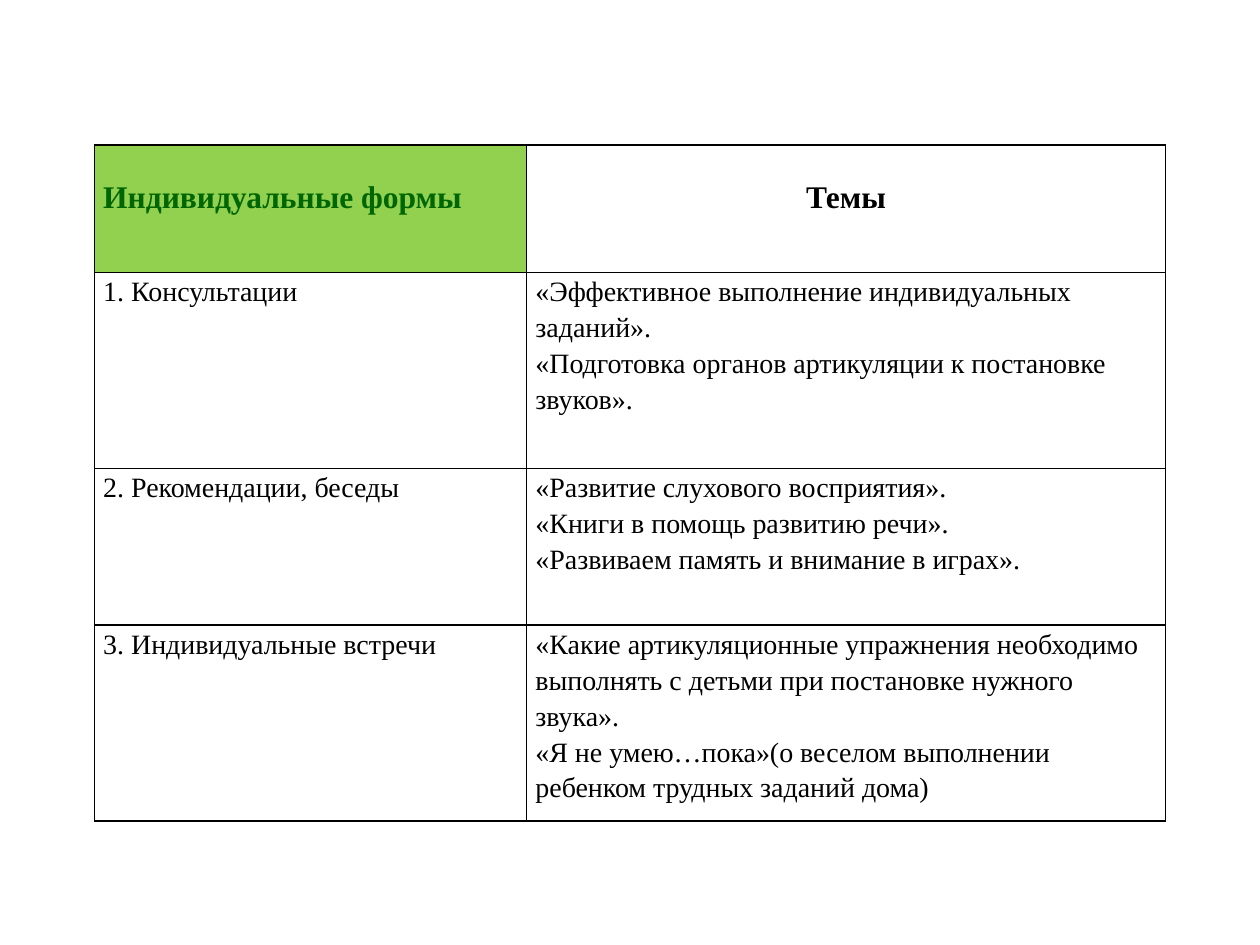
from lxml.etree import SubElement
from pptx import Presentation
from pptx.dml.color import RGBColor
from pptx.enum.text import PP_ALIGN
from pptx.oxml.ns import qn
from pptx.util import Pt

HEADINGS = ["Индивидуальные формы", "Темы"]
FORMS = [
    ("1. Консультации", [
        "«Эффективное выполнение индивидуальных заданий».",
        "«Подготовка органов артикуляции к постановке звуков».",
    ]),
    ("2. Рекомендации, беседы", [
        "«Развитие слухового восприятия».",
        "«Книги в помощь развитию речи».",
        "«Развиваем память и внимание в играх».",
    ]),
    ("3. Индивидуальные встречи", [
        "«Какие артикуляционные упражнения необходимо выполнять с детьми "
        "при постановке нужного звука».",
        "«Я не умею…пока»(о веселом выполнении ребенком трудных заданий дома)",
    ]),
]
COLUMN_WIDTHS = [247, 365]
ROW_HEIGHTS = [72.8, 112, 89.6, 112]
LEFT, TOP = 54, 82.8
HEADING_TOP = 17.5
HANGING = 27.4
BORDERS = ("a:lnL", "a:lnR", "a:lnT", "a:lnB")

HEADING_FONT = {"name": "Times New Roman", "size": Pt(18), "bold": True}
BODY_FONT = {"name": "Times New Roman", "size": Pt(16), "bold": False}


def color(value):
    return RGBColor.from_string(value)


def apply(target, values):
    for key, value in values.items():
        setattr(target, key, value)


def add_borders(cell):
    properties = cell._tc.get_or_add_tcPr()
    for tag in BORDERS:
        border = SubElement(properties, qn(tag), w=str(Pt(1)))
        fill = SubElement(border, qn("a:solidFill"))
        SubElement(fill, qn("a:srgbClr"), val="000000")


def write_cell(cell, lines, font, ink="000000", fill=None, align=PP_ALIGN.LEFT,
               top=0, hanging=0):
    apply(cell, {"margin_left": Pt(5), "margin_right": Pt(5),
                 "margin_top": Pt(top), "margin_bottom": Pt(0)})
    add_borders(cell)
    if fill:
        cell.fill.solid()
        cell.fill.fore_color.rgb = color(fill)
    else:
        cell.fill.background()
    frame = cell.text_frame
    frame.text = "\n".join(lines)
    for paragraph in frame.paragraphs:
        apply(paragraph, {"line_spacing": 1.15, "alignment": align})
        if hanging:
            properties = paragraph._p.get_or_add_pPr()
            properties.set("marL", str(Pt(hanging)))
            properties.set("indent", str(-Pt(hanging)))
        for run in paragraph.runs:
            apply(run.font, font)
            run.font.color.rgb = color(ink)


def main():
    presentation = Presentation()
    apply(presentation, {"slide_width": Pt(720), "slide_height": Pt(540)})
    slide = presentation.slides.add_slide(presentation.slide_layouts[6])
    table = slide.shapes.add_table(
        len(ROW_HEIGHTS), len(COLUMN_WIDTHS), Pt(LEFT), Pt(TOP),
        Pt(sum(COLUMN_WIDTHS)), Pt(sum(ROW_HEIGHTS))).table
    apply(table, {"first_row": False, "horz_banding": False})
    for column, width in zip(table.columns, COLUMN_WIDTHS):
        column.width = Pt(width)
    for row, height in zip(table.rows, ROW_HEIGHTS):
        row.height = Pt(height)

    forms_heading, topics_heading = HEADINGS
    write_cell(table.cell(0, 0), [forms_heading], HEADING_FONT,
               ink="006600", fill="92D050", top=HEADING_TOP)
    write_cell(table.cell(0, 1), [topics_heading], HEADING_FONT,
               align=PP_ALIGN.CENTER, top=HEADING_TOP)
    for row, (form, topics) in enumerate(FORMS, start=1):
        write_cell(table.cell(row, 0), [form], BODY_FONT, hanging=HANGING)
        write_cell(table.cell(row, 1), topics, BODY_FONT)
    presentation.save("out.pptx")


if __name__ == "__main__":
    main()
